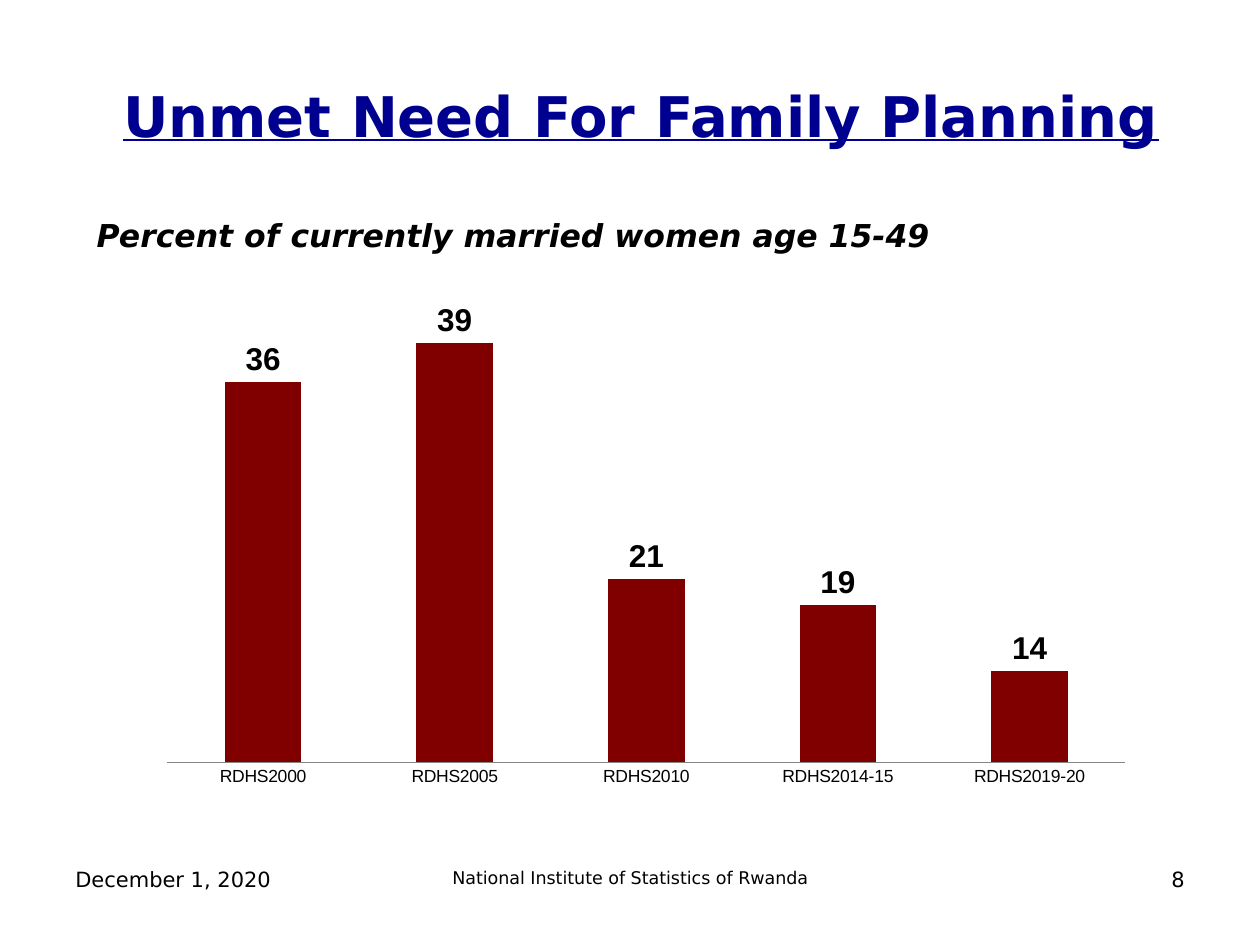
import pptx
import pptx.chart.data
import pptx.dml.color
import pptx.enum.chart
import pptx.enum.text
import pptx.oxml
import pptx.oxml.ns
import pptx.util

Cm = pptx.util.Cm
Pt = pptx.util.Pt
ALIGN = pptx.enum.text.PP_ALIGN
ANCHOR = pptx.enum.text.MSO_ANCHOR

COLORS = {"title": "000090", "text": "000000", "bar": "800000", "axis": "868686"}
RESULTS = {
    "RDHS2000": 36,
    "RDHS2005": 39,
    "RDHS2010": 21,
    "RDHS2014-15": 19,
    "RDHS2019-20": 14,
}
PLOT_LAYOUT = {"x": 0.02, "y": 0.02, "w": 0.96, "h": 0.91}
FOOTER_TOP, FOOTER_HEIGHT = 17.35, 1.32


def rgb(name):
    return pptx.dml.color.RGBColor.from_string(COLORS[name])


def set_attrs(obj, values):
    for name, value in values.items():
        setattr(obj, name, value)


def set_font(font, size, name="DejaVu Sans", color="text", **style):
    set_attrs(font, {"name": name, "size": Pt(size), **style})
    font.color.rgb = rgb(color)


def add_text(s, text, box, size, align=ALIGN.LEFT, anchor=ANCHOR.TOP, **style):
    tf = s.shapes.add_textbox(*map(Cm, box)).text_frame
    set_attrs(tf, {"word_wrap": True, "vertical_anchor": anchor})
    p = tf.paragraphs[0]
    p.alignment = align
    r = p.add_run()
    r.text = text
    set_font(r.font, size, **style)


def set_plot_layout(chart):
    area = chart._chartSpace.chart.plotArea
    for old in area.findall(pptx.oxml.ns.qn("c:layout")):
        area.remove(old)
    modes = '<c:layoutTarget val="inner"/><c:xMode val="edge"/><c:yMode val="edge"/>'
    parts = "".join(f'<c:{k} val="{v}"/>' for k, v in PLOT_LAYOUT.items())
    area.insert(0, pptx.oxml.parse_xml(
        f'<c:layout {pptx.oxml.ns.nsdecls("c")}>'
        f"<c:manualLayout>{modes}{parts}</c:manualLayout></c:layout>"))


def add_column_chart(s, results, box):
    data = pptx.chart.data.CategoryChartData()
    data.categories = list(results)
    data.add_series("Series 1", list(results.values()))
    kind = pptx.enum.chart.XL_CHART_TYPE.COLUMN_CLUSTERED
    chart = s.shapes.add_chart(kind, *map(Cm, box), data).chart
    set_attrs(chart, {"has_legend": False, "has_title": False})
    set_font(chart.font, 10, "Arial")

    none = pptx.enum.chart.XL_TICK_MARK.NONE
    set_attrs(chart.category_axis, {"major_tick_mark": none, "minor_tick_mark": none})
    line = chart.category_axis.format.line
    line.width = Pt(0.75)
    line.color.rgb = rgb("axis")
    set_attrs(chart.value_axis, {
        "visible": False,
        "has_major_gridlines": False,
        "minimum_scale": 7,
        "maximum_scale": 42,
    })

    plot = chart.plots[0]
    set_attrs(plot, {"gap_width": 150, "overlap": -25, "vary_by_categories": False})
    fill = plot.series[0].format.fill
    fill.solid()
    fill.fore_color.rgb = rgb("bar")
    labels = plot.series[0].data_labels
    set_attrs(labels, {
        "show_value": True,
        "position": pptx.enum.chart.XL_LABEL_POSITION.OUTSIDE_END,
    })
    set_font(labels.font, 18, "Arial", bold=True)
    set_plot_layout(chart)


def add_footer(s):
    for text, left, width, size, align in (
        ("December 1, 2020", 1.27, 5.92, 12, ALIGN.LEFT),
        ("National Institute of Statistics of Rwanda", 8.68, 8.05, 10, ALIGN.CENTER),
        ("8", 18.21, 5.92, 12, ALIGN.RIGHT),
    ):
        add_text(s, text, (left, FOOTER_TOP, width, FOOTER_HEIGHT), size, align)


def main():
    prs = pptx.Presentation()
    set_attrs(prs, {"slide_width": Cm(25.4), "slide_height": Cm(19.05)})
    s = prs.slides.add_slide(prs.slide_layouts[6])
    add_footer(s)
    add_text(s, "Unmet Need For Family Planning", (1.07, 1.47, 23.7, 1.7), 32,
             ALIGN.CENTER, ANCHOR.MIDDLE, color="title", bold=True, underline=True)
    add_text(s, "Percent of currently married women age 15-49",
             (1.7, 4.24, 22.66, 1.02), 18, bold=True, italic=True)
    add_column_chart(s, RESULTS, (2.97, 5.92, 20.12, 10.16))
    prs.save("out.pptx")


if __name__ == "__main__":
    main()
